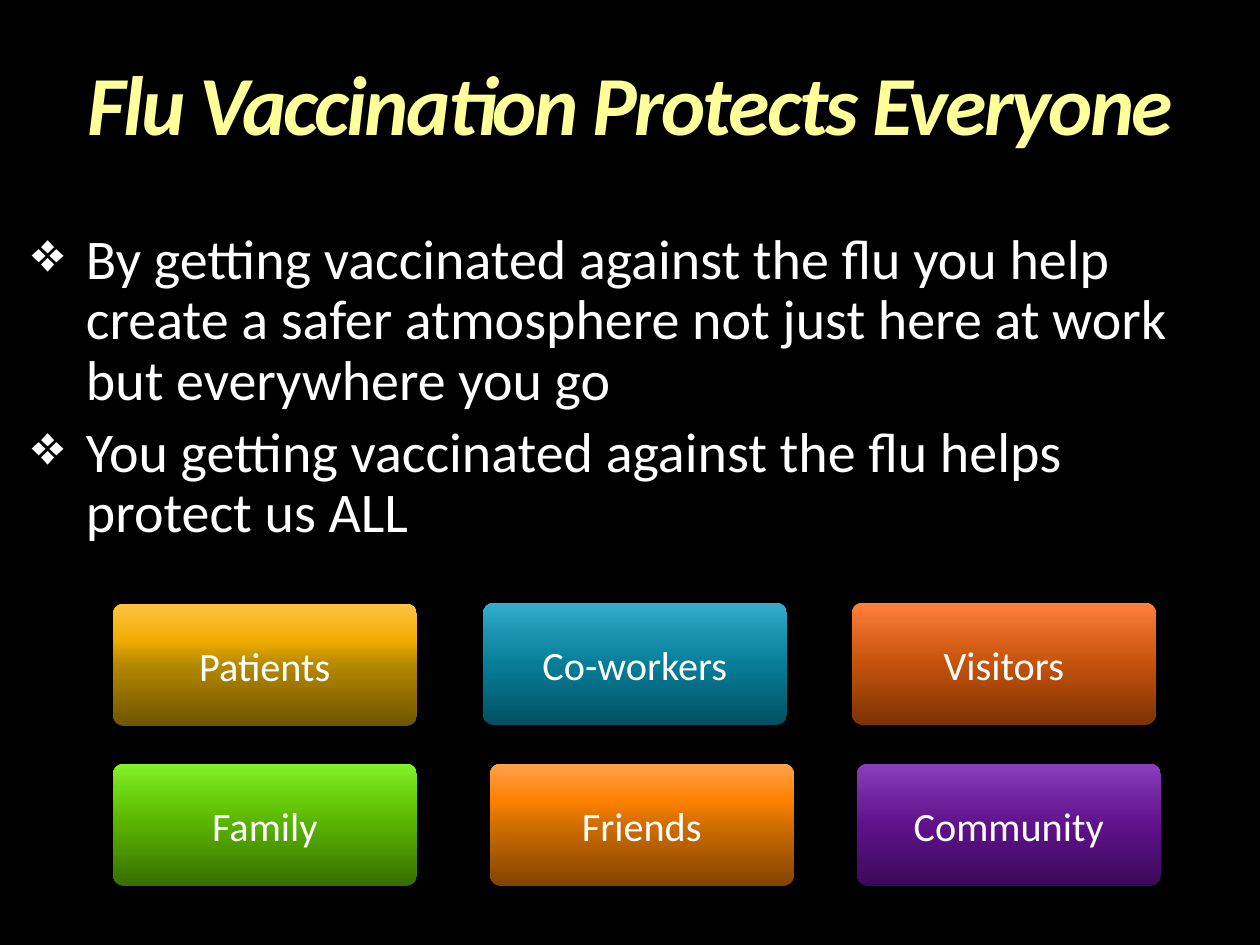
"""Build the slide about who a flu vaccination protects."""
from lxml import etree
from pptx import Presentation
from pptx.dml.color import RGBColor
from pptx.enum.shapes import MSO_SHAPE
from pptx.enum.text import MSO_ANCHOR, MSO_AUTO_SIZE, PP_ALIGN
from pptx.oxml.ns import qn
from pptx.util import Emu, Pt

ROUNDED = MSO_SHAPE.ROUNDED_RECTANGLE
TOP, MIDDLE = MSO_ANCHOR.TOP, MSO_ANCHOR.MIDDLE
LEFT, CENTER = PP_ALIGN.LEFT, PP_ALIGN.CENTER
GROW = MSO_AUTO_SIZE.SHAPE_TO_FIT_TEXT
EMU_PER_PX = 914400 / 126
FONT, WHITE, BLACK = "Calibri", "FFFFFF", "000000"

HEADING = "Flu Vaccination Protects Everyone"
HEADING_BOX = (53, 63, 1155, 92)
HEADING_STOPS = [(0, "FFFFB9"), (36, "FFFF99"), (86, "F6AE1E")]

REASONS = [
    "By getting vaccinated against the flu you help create a safer atmosphere "
    "not just here at work but everywhere you go",
    "You getting vaccinated against the flu helps protect us ALL",
]
REASONS_BOX = (32, 231, 1197, 325)
INDENT = 54

GROUPS = [
    ("Patients", 113, 604, ["705400", "B48800", "F0AC00", "FFC342"]),
    ("Co-workers", 483, 603, ["015062", "077E99", "178EAB", "35ADCE"]),
    ("Visitors", 852, 603, ["7D3203", "C4520B", "DB631C", "FF803C"]),
    ("Family", 113, 764, ["376E00", "58B100", "68CC0B", "83F229"]),
    ("Friends", 490, 764, ["824400", "D16D00", "FE8100", "FFA04B"]),
    ("Community", 857, 764, ["3C0958", "5F128B", "6F229C", "8B3FBD"]),
]
GROUP_SIZE = (304, 122)
GROUP_STOPS = [0, 50, 70, 100]


def px(length):
    return Emu(round(length * EMU_PER_PX))


def color(value):
    return RGBColor.from_string(value)


def set_gradient(fill, element, stops, angle):
    fill.gradient()
    fill.gradient_angle = angle
    stop_list = element.xpath(".//a:gsLst")[0]
    for stop in list(stop_list):
        stop_list.remove(stop)
    for position, value in stops:
        stop = etree.SubElement(stop_list, qn("a:gs"), pos=str(position * 1000))
        etree.SubElement(stop, qn("a:srgbClr"), val=value)


def write_text(frame, paragraphs, size, align=LEFT, anchor=TOP, margins=(0, 0),
               line_spacing=None, space_before=0, bullet=None, auto_size=None):
    frame.word_wrap = True
    frame.vertical_anchor = anchor
    frame.margin_left = frame.margin_right = px(margins[0])
    frame.margin_top = frame.margin_bottom = px(margins[1])
    if auto_size is not None:
        frame.auto_size = auto_size
    for index, text in enumerate(paragraphs):
        paragraph = frame.add_paragraph() if index else frame.paragraphs[0]
        paragraph.alignment = align
        paragraph.line_spacing = line_spacing
        paragraph.space_before = Pt(space_before if index else 0)
        if bullet:
            properties = paragraph._p.get_or_add_pPr()
            properties.set("marL", str(px(INDENT)))
            properties.set("indent", str(-px(INDENT)))
            etree.SubElement(properties, qn("a:buChar"), char=bullet)
        run = paragraph.add_run()
        run.text = text
        run.font.name = FONT
        run.font.size = Pt(size)
        run.font.color.rgb = color(WHITE)


def add_heading(slide):
    heading = slide.shapes.title
    heading.left, heading.top, heading.width, heading.height = map(px, HEADING_BOX)
    write_text(heading.text_frame, [HEADING], 48, align=CENTER,
               line_spacing=0.9, auto_size=GROW)
    run = heading.text_frame.paragraphs[0].runs[0]
    run.font.bold = run.font.italic = True
    set_gradient(run.font.fill, heading.element, HEADING_STOPS, 270)
    run._r.get_or_add_rPr().set("spc", "-150")


def add_group(slide, label, left, top, shades):
    group = slide.shapes.add_shape(ROUNDED, *map(px, (left, top, *GROUP_SIZE)))
    group.adjustments[0] = 0.09
    group.shadow.inherit = False
    group.line.fill.background()
    set_gradient(group.fill, group.element, zip(GROUP_STOPS, shades), 90)
    write_text(group.text_frame, [label], 23, align=CENTER, anchor=MIDDLE,
               margins=(13, 6))


def main():
    deck = Presentation()
    deck.slide_width, deck.slide_height = px(1260), px(945)
    slide = deck.slides.add_slide(deck.slide_layouts[5])
    slide.background.fill.solid()
    slide.background.fill.fore_color.rgb = color(BLACK)
    add_heading(slide)
    reasons = slide.shapes.add_textbox(*map(px, REASONS_BOX))
    write_text(reasons.text_frame, REASONS, 32, line_spacing=0.9,
               space_before=6.4, bullet="❖", auto_size=GROW)
    for group in GROUPS:
        add_group(slide, *group)
    deck.save("out.pptx")


if __name__ == "__main__":
    main()
